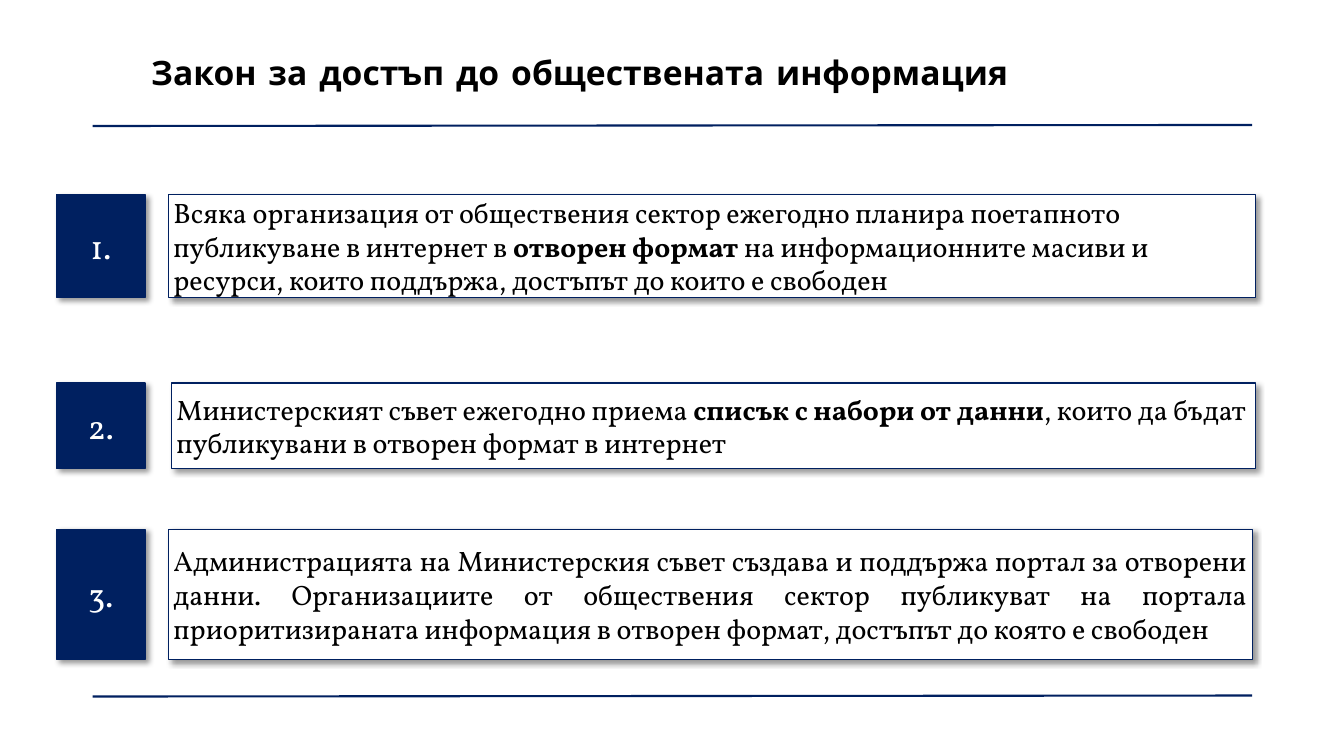
from lxml import etree
from pptx import Presentation
from pptx.dml.color import RGBColor
from pptx.enum.shapes import MSO_CONNECTOR, MSO_SHAPE
from pptx.enum.text import MSO_ANCHOR, PP_ALIGN
from pptx.oxml.ns import qn
from pptx.util import Inches, Pt

COLORS = {"navy": "002060", "white": "FFFFFF", "black": "000000"}
BODY_FONT, TITLE_FONT = "Vollkorn", "Comic Neue"
EMU_PER_POINT = 12700

# top, height, text left, text width, alignment, runs as (text, bold)
PROVISIONS = [
    (1.93, 1.02, 1.67, 10.78, PP_ALIGN.LEFT, [
        ("Всяка организация от обществения сектор ежегодно планира поетапното "
         "публикуване в интернет в ", False),
        ("отворен формат ", True),
        ("на информационните масиви и ресурси, които поддържа, достъпът до "
         "които е свободен", False)]),
    (3.8, 0.85, 1.7, 10.75, PP_ALIGN.LEFT, [
        ("Министерският съвет ежегодно приема ", False),
        ("списък с набори от данни", True),
        (", които да бъдат публикувани в отворен формат в интернет", False)]),
    (5.25, 1.29, 1.67, 10.75, PP_ALIGN.JUSTIFY, [
        ("Администрацията на Министерския съвет създава и поддържа портал за "
         "отворени данни. Организациите от обществения сектор публикуват на "
         "портала приоритизираната информация в отворен формат, достъпът до "
         "която е свободен", False)]),
]


def color(name):
    return RGBColor.from_string(COLORS[name])


def fill_text(frame, runs, font, size, ink, align, inset_y=0):
    frame.word_wrap = True
    frame.vertical_anchor = MSO_ANCHOR.MIDDLE
    frame.margin_left = frame.margin_right = Inches(0.05)
    frame.margin_top = frame.margin_bottom = Inches(inset_y)
    paragraph = frame.paragraphs[0]
    paragraph.alignment = align
    for text, bold in runs:
        run = paragraph.add_run()
        run.text = text
        run.font.name = font
        run.font.size = Pt(size)
        run.font.bold = bold
        run.font.color.rgb = color(ink)
    return paragraph


def add_soft_shadow(shape):
    shape.shadow.inherit = False
    effects = shape._element.spPr.find(qn("a:effectLst"))
    shadow = etree.SubElement(
        effects, qn("a:outerShdw"), blurRad=str(4 * EMU_PER_POINT),
        dist=str(3 * EMU_PER_POINT), dir=str(45 * 60000), algn="tl",
        rotWithShape="0")
    tint = etree.SubElement(shadow, qn("a:srgbClr"), val=COLORS["black"])
    etree.SubElement(tint, qn("a:alpha"), val="40000")


def add_panel(slide, left, top, width, height, fill):
    panel = slide.shapes.add_shape(
        MSO_SHAPE.RECTANGLE, Inches(left), Inches(top), Inches(width), Inches(height))
    panel.fill.solid()
    panel.fill.fore_color.rgb = color(fill)
    panel.line.color.rgb = color("navy")
    panel.line.width = Pt(1)
    add_soft_shadow(panel)
    return panel.text_frame


def add_rule(slide, y):
    """Draw a full-width navy rule that rises slightly to the right."""
    rule = slide.shapes.add_connector(
        MSO_CONNECTOR.STRAIGHT, Inches(0.92), Inches(y), Inches(12.42), Inches(y - 0.01))
    rule.line.color.rgb = color("navy")
    rule.line.width = Pt(1.5)
    etree.SubElement(rule._element.spPr, qn("a:effectLst"))


def set_title(slide, text):
    title = slide.shapes.title
    title.left, title.top = Inches(1.45), Inches(0.4)
    title.width, title.height = Inches(10.97), Inches(0.69)
    paragraph = fill_text(title.text_frame, [(text, True)], TITLE_FONT, 24,
                          "black", PP_ALIGN.LEFT, inset_y=0.05)
    paragraph.line_spacing = 0.9


def add_provision(slide, number, top, height, left, width, align, runs):
    badge = add_panel(slide, 0.56, top, 0.88, height, "navy")
    fill_text(badge, [(f"{number}.", False)], BODY_FONT, 24, "white", PP_ALIGN.CENTER)
    statement = add_panel(slide, left, top, width, height, "white")
    fill_text(statement, runs, BODY_FONT, 20, "black", align)


def main():
    deck = Presentation()
    deck.slide_width, deck.slide_height = Inches(13.33), Inches(7.5)
    slide = deck.slides.add_slide(deck.slide_layouts.get_by_name("Title Only"))
    set_title(slide, "Закон за достъп до обществената информация")
    for y in (1.25, 6.91):
        add_rule(slide, y)
    for number, provision in enumerate(PROVISIONS, start=1):
        add_provision(slide, number, *provision)
    deck.save("out.pptx")


if __name__ == "__main__":
    main()
